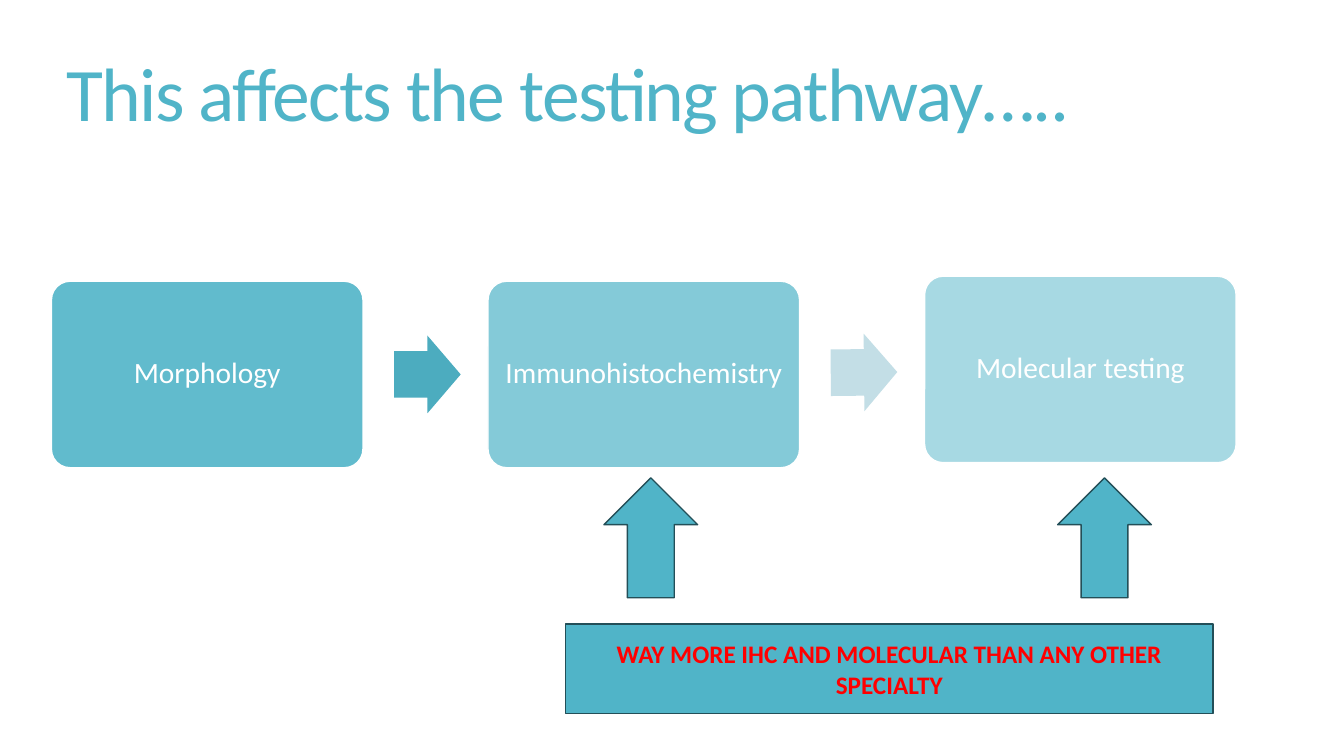
"""Build the slide on how the testing pathway is affected."""
from dataclasses import dataclass

from pptx import Presentation
from pptx.dml.color import RGBColor
from pptx.enum.shapes import MSO_SHAPE
from pptx.enum.text import MSO_ANCHOR, PP_ALIGN
from pptx.oxml.ns import qn
from pptx.util import Pt
from lxml import etree

PX = 9144
ROUND = MSO_SHAPE.ROUNDED_RECTANGLE
RIGHT = MSO_SHAPE.RIGHT_ARROW
UP = MSO_SHAPE.UP_ARROW
RECT = MSO_SHAPE.RECTANGLE
MIDDLE = MSO_ANCHOR.MIDDLE
LEFT = PP_ALIGN.LEFT
CENTER = PP_ALIGN.CENTER


@dataclass(frozen=True)
class Theme:
    font: str = "Calibri"
    teal: str = "50B4C8"
    edge: str = "234F58"
    deep: str = "4CACBF"
    pale: str = "C3DEE6"
    white: str = "FFFFFF"
    red: str = "FF0000"
    title: int = 54
    step: int = 21
    note: int = 18


theme = Theme()


def draw(kind, box, fill, line=None):
    shape = slide.shapes.add_shape(kind, *(n * PX for n in box))
    shape.shadow.inherit = False
    shape.fill.solid()
    shape.fill.fore_color.rgb = RGBColor.from_string(fill)
    if line:
        shape.line.color.rgb = RGBColor.from_string(line)
        shape.line.width = Pt(1)
    else:
        shape.line.fill.background()
    return shape


def write(shape, text, size, color, align=CENTER, space=1.0, bold=False):
    frame = shape.text_frame
    frame.word_wrap = True
    frame.vertical_anchor = MIDDLE
    para = frame.paragraphs[0]
    para.alignment = align
    para.line_spacing = space
    run = para.add_run()
    run.text = text
    run.font.name = theme.font
    run.font.size = Pt(size)
    run.font.bold = bold
    run.font.color.rgb = RGBColor.from_string(color)
    return run


deck = Presentation()
deck.slide_width = 1333 * PX
deck.slide_height = 750 * PX
slide = deck.slides.add_slide(deck.slide_layouts[6])

title = slide.shapes.add_textbox(*(n * PX for n in (56, 7, 1178, 181)))
run = write(title, "This affects the testing pathway…..", theme.title,
            theme.teal, LEFT, 0.85)
run.font._element.set("spc", "-120")

steps = [("Morphology", 279, 90), ("Immunohistochemistry", 279, 70),
         ("Molecular testing", 274, 50)]
for i, (name, top, alpha) in enumerate(steps):
    card = draw(ROUND, (51 + 433 * i, top, 309, 185), theme.teal, theme.white)
    card.adjustments[0] = 0.1
    tint = card.fill._xPr.find(qn("a:solidFill"))[0]
    etree.SubElement(tint, qn("a:alpha"), val=str(alpha * 1000))
    frame = card.text_frame
    frame.margin_left = frame.margin_right = 9 * PX
    write(card, name, theme.step, theme.white, space=0.9)

for left, top, fill, turn in [(391, 333, theme.deep, 0),
                              (824, 331, theme.pale, 359.4)]:
    arrow = draw(RIGHT, (left, top, 66, 77), fill)
    arrow.adjustments[0] = 0.6
    arrow.rotation = turn

for left in (599, 1049):
    draw(UP, (left, 474, 93, 119), theme.teal, theme.edge)

note = draw(RECT, (561, 619, 642, 89), theme.teal, theme.edge)
write(note, "WAY MORE IHC AND MOLECULAR THAN ANY OTHER SPECIALTY",
      theme.note, theme.red, bold=True)

deck.save("out.pptx")
